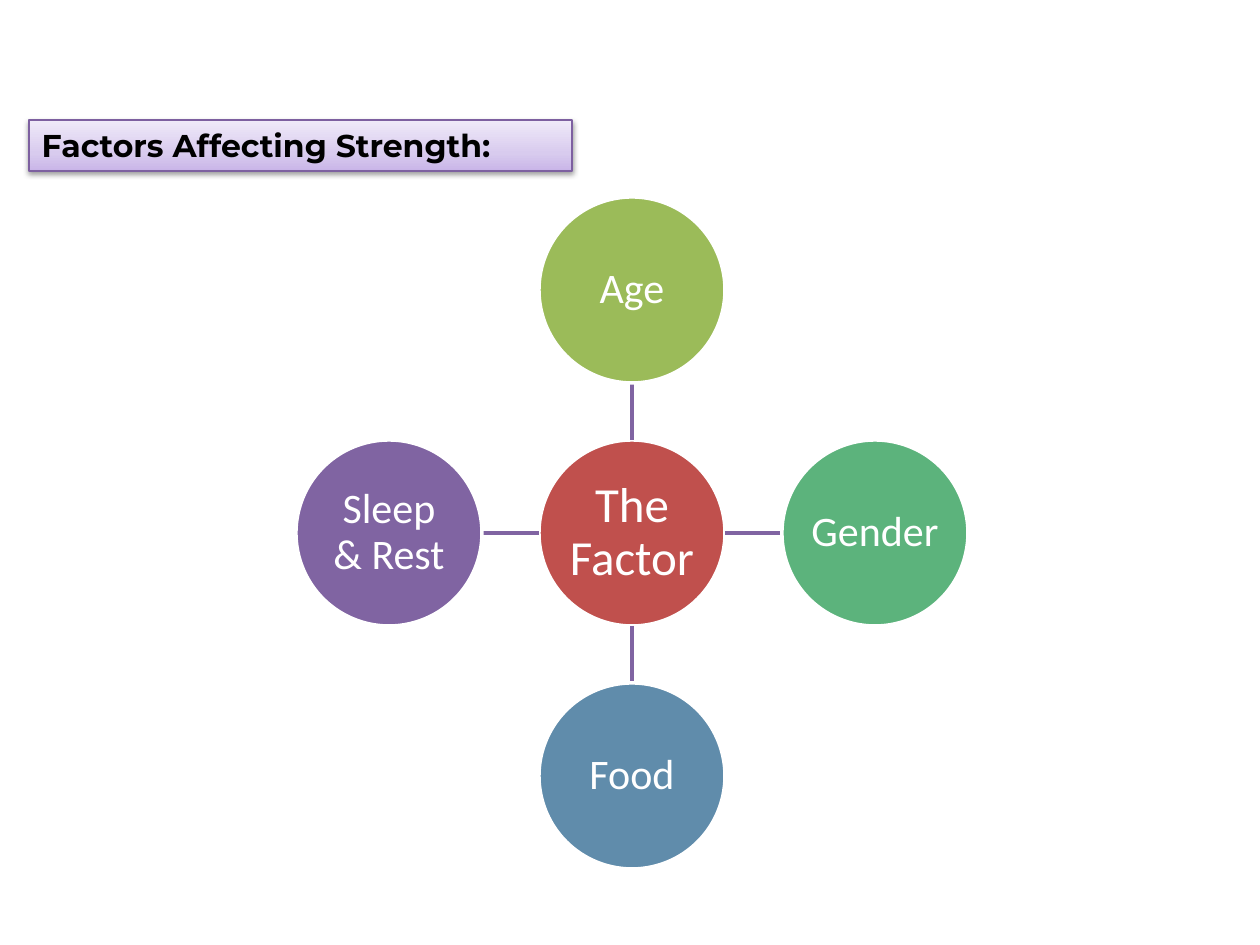
from copy import deepcopy
from dataclasses import dataclass

from lxml import etree
from pptx import Presentation
from pptx.dml.color import RGBColor
from pptx.enum.shapes import MSO_CONNECTOR, MSO_SHAPE
from pptx.enum.text import MSO_ANCHOR, MSO_AUTO_SIZE, PP_ALIGN
from pptx.oxml import parse_xml
from pptx.oxml.ns import nsdecls, qn
from pptx.util import Emu, Pt

OVAL = MSO_SHAPE.OVAL
STRAIGHT = MSO_CONNECTOR.STRAIGHT
TOP, MIDDLE = MSO_ANCHOR.TOP, MSO_ANCHOR.MIDDLE
NO_AUTO_SIZE = MSO_AUTO_SIZE.NONE
LEFT, CENTER = PP_ALIGN.LEFT, PP_ALIGN.CENTER
PX_PER_INCH = 126
TITLE_ONLY = 5


@dataclass(frozen=True)
class Theme:
    title_font: str = "Montserrat"
    body_font: str = "Calibri"
    title_size: int = 18
    hub_size: int = 28
    factor_size: int = 24
    black: str = "000000"
    white: str = "FFFFFF"
    red: str = "C0504D"
    lime: str = "9BBB59"
    green: str = "5CB37C"
    blue: str = "608CAB"
    purple: str = "8064A2"
    title_line: str = "7D60A0"
    title_gradient: tuple = ((0, "C9B5E8"), (0.35, "D8CBEE"), (1, "F0EAF9"))


THEME = Theme()
FACTORS = (
    ("Age", THEME.lime, 0, -1),
    ("Gender", THEME.green, 1, 0),
    ("Food", THEME.blue, 0, 1),
    ("Sleep & Rest", THEME.purple, -1, 0),
)


def px(length):
    return Emu(round(length * 914400 / PX_PER_INCH))


def rgb(color):
    return RGBColor.from_string(color)


def style_line(line, color, width):
    line.color.rgb = rgb(color)
    line.width = Pt(width)


def style_paragraph(para, name, size, color, alignment):
    para.alignment = alignment
    para.font.name = name
    para.font.size = Pt(size)
    para.font.color.rgb = rgb(color)


def fill_gradient(shape, stops):
    shape.fill.gradient()
    shape.fill.gradient_angle = 90
    stop_list = shape._element.spPr.find(".//" + qn("a:gsLst"))
    stop_list.append(deepcopy(stop_list[0]))
    for stop, (position, color) in zip(shape.fill.gradient_stops, stops):
        stop.position = position
        stop.color.rgb = rgb(color)


def add_soft_shadow(shape, color):
    shape._element.spPr.append(parse_xml(
        f'<a:effectLst {nsdecls("a")}>'
        '<a:outerShdw blurRad="39370" dist="20320" dir="5400000" rotWithShape="0">'
        f'<a:srgbClr val="{color}"><a:alpha val="38000"/></a:srgbClr>'
        '</a:outerShdw></a:effectLst>'))


def build_title(page, left, top, width, height):
    title = page.shapes.title
    title.left, title.top, title.width, title.height = map(px, (left, top, width, height))
    fill_gradient(title, THEME.title_gradient)
    style_line(title.line, THEME.title_line, 0.75)
    add_soft_shadow(title, THEME.black)
    frame = title.text_frame
    frame.text = "Factors Affecting Strength:"
    frame.vertical_anchor = TOP
    frame.auto_size = NO_AUTO_SIZE
    para = frame.paragraphs[0]
    style_paragraph(para, THEME.title_font, THEME.title_size, THEME.black, LEFT)
    para.font.bold = True


def add_circle(page, center_x, center_y, diameter, label, color, size):
    radius = diameter / 2
    circle = page.shapes.add_shape(
        OVAL, px(center_x - radius), px(center_y - radius), px(diameter), px(diameter))
    circle.shadow.inherit = False
    circle.fill.solid()
    circle.fill.fore_color.rgb = rgb(color)
    style_line(circle.line, THEME.white, 2)
    frame = circle.text_frame
    frame.text = label
    frame.word_wrap = True
    frame.vertical_anchor = MIDDLE
    frame.margin_left = frame.margin_right = px(2)
    frame.margin_top = frame.margin_bottom = px(2)
    para = frame.paragraphs[0]
    style_paragraph(para, THEME.body_font, size, THEME.white, CENTER)
    para.line_spacing = 0.9


def add_spoke(page, start_x, start_y, end_x, end_y):
    spoke = page.shapes.add_connector(
        STRAIGHT, px(start_x), px(start_y), px(end_x), px(end_y))
    style_line(spoke.line, THEME.purple, 2)
    etree.SubElement(spoke._element.spPr, qn("a:effectLst"))


def build_factor_wheel(page, left, top, side, diameter):
    center_x, center_y = left + side / 2, top + side / 2
    radius = diameter / 2
    reach = side / 2 - radius
    add_circle(page, center_x, center_y, diameter, "The Factor", THEME.red, THEME.hub_size)
    for label, color, step_x, step_y in FACTORS:
        add_spoke(page,
                  center_x + step_x * radius, center_y + step_y * radius,
                  center_x + step_x * (reach - radius), center_y + step_y * (reach - radius))
        add_circle(page, center_x + step_x * reach, center_y + step_y * reach,
                   diameter, label, color, THEME.factor_size)


def main():
    deck = Presentation()
    deck.slide_width, deck.slide_height = px(1260), px(945)
    page = deck.slides.add_slide(deck.slide_layouts[TITLE_ONLY])
    build_title(page, left=29, top=120, width=543, height=51)
    build_factor_wheel(page, left=296, top=197, side=672, diameter=186)
    deck.save("out.pptx")


if __name__ == "__main__":
    main()
